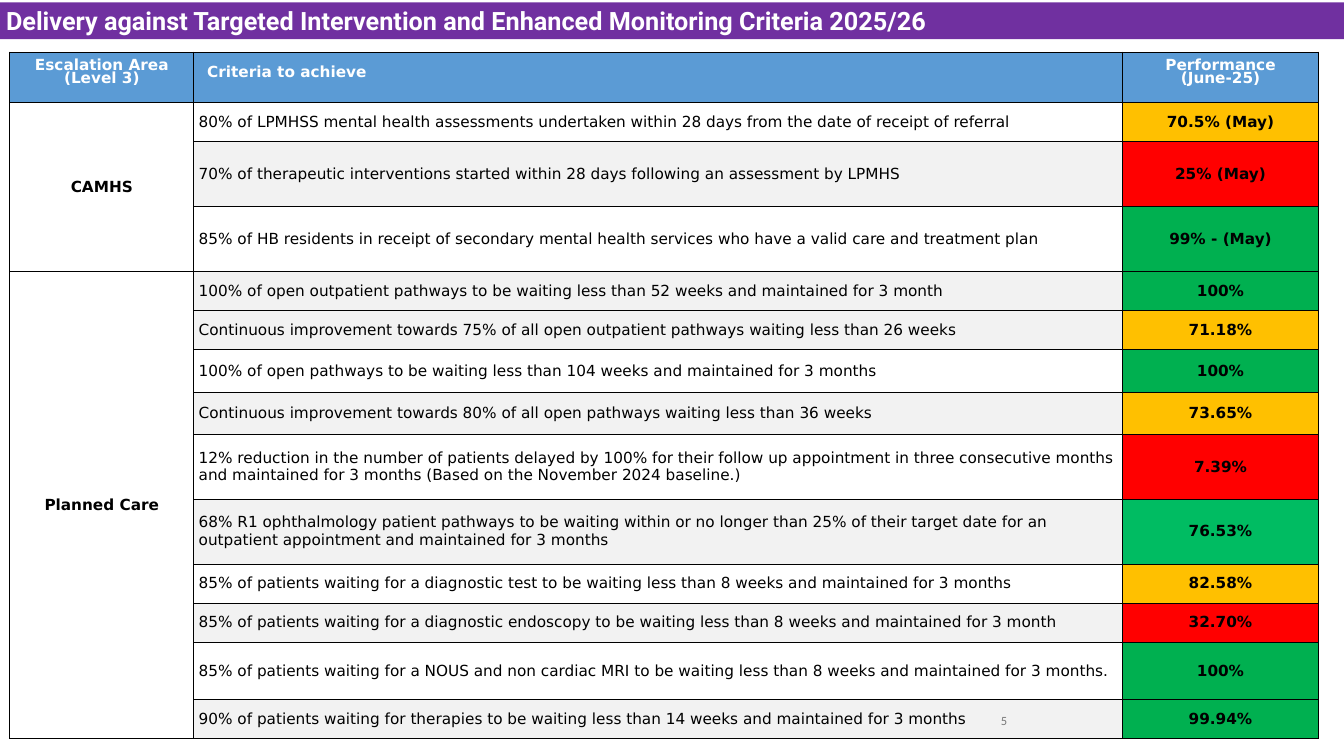
from dataclasses import dataclass
from typing import Any

from lxml import etree
from pptx import Presentation
from pptx.dml.color import RGBColor
from pptx.enum.shapes import MSO_SHAPE
from pptx.enum.text import MSO_ANCHOR, PP_ALIGN
from pptx.oxml.ns import qn
from pptx.util import Inches, Pt

LEFT, CENTER, RIGHT, JUSTIFY = PP_ALIGN.LEFT, PP_ALIGN.CENTER, PP_ALIGN.RIGHT, PP_ALIGN.JUSTIFY
TOP, MIDDLE = MSO_ANCHOR.TOP, MSO_ANCHOR.MIDDLE
RECTANGLE = MSO_SHAPE.RECTANGLE

SLIDE_WIDTH, SLIDE_HEIGHT = Inches(21.99), Inches(12.37)
TABLE_FONT = "DejaVu Sans"
COLOURS = {
    "banner": "7030A0", "header": "5B9BD5", "white": "FFFFFF", "black": "000000",
    "band": "F2F2F2", "number": "797979", "amber": "FFC000", "red": "FF0000",
    "green": "00B050", "light green": "00BC62",
}
COLUMN_SHARES = (13.69, 69.12, 14.55)
HEADER_SHARE = 6.71
SHORT, TALL = 5.17, 8.57


@dataclass(frozen=True)
class Criterion:
    wording: str
    performance: str
    rating: str
    band: str
    height: float = SHORT


@dataclass(frozen=True)
class Area:
    name: str
    criteria: tuple[Criterion, ...]


@dataclass(frozen=True)
class TextStyle:
    font: dict[str, Any]
    colour: str
    paragraph: dict[str, Any]


HEADERS = (
    (("Escalation Area", "(Level 3)"), CENTER),
    (("Criteria to achieve",), LEFT),
    (("Performance", "(June-25)"), CENTER),
)
AREAS = (
    Area("CAMHS", (
        Criterion("80% of LPMHSS mental health assessments undertaken within 28 days from the date of receipt of referral",
                  "70.5% (May)", "amber", "white"),
        Criterion("70% of therapeutic interventions started within 28 days following an assessment by LPMHS",
                  "25% (May)", "red", "band", TALL),
        Criterion("85% of HB residents in receipt of secondary mental health services who have a valid care and treatment plan",
                  "99% - (May)", "green", "white", TALL),
    )),
    Area("Planned Care", (
        Criterion("100% of open outpatient pathways to be waiting less than 52 weeks and maintained for 3 month",
                  "100%", "green", "band"),
        Criterion("Continuous improvement towards 75% of all open outpatient pathways waiting less than 26 weeks",
                  "71.18%", "amber", "band"),
        Criterion("100% of open pathways to be waiting less than 104 weeks and maintained for 3 months",
                  "100%", "green", "white", 5.74),
        Criterion("Continuous improvement towards 80% of all open pathways waiting less than 36 weeks",
                  "73.65%", "amber", "band", 5.5),
        Criterion("12% reduction in the number of patients delayed by 100% for their follow up appointment in three "
                  "consecutive months and maintained for 3 months (Based on the November 2024 baseline.)",
                  "7.39%", "red", "white", TALL),
        Criterion("68% R1 ophthalmology patient pathways to be waiting within or no longer than 25% of their target date "
                  "for an outpatient appointment and maintained for 3 months",
                  "76.53%", "light green", "band", TALL),
        Criterion("85% of patients waiting for a diagnostic test to be waiting less than 8 weeks and maintained for 3 months",
                  "82.58%", "amber", "white"),
        Criterion("85% of patients waiting for a diagnostic endoscopy to be waiting less than 8 weeks and maintained for 3 month",
                  "32.70%", "red", "band"),
        Criterion("85% of patients waiting for a NOUS and non cardiac MRI to be waiting less than 8 weeks and maintained for 3 months.",
                  "100%", "green", "white", 7.6),
        Criterion("90% of patients waiting for therapies to be waiting less than 14 weeks and maintained for 3 months",
                  "99.94%", "green", "band"),
    )),
)


def across(share: float) -> int:
    return round(SLIDE_WIDTH * share / 100)


def down(share: float) -> int:
    return round(SLIDE_HEIGHT * share / 100)


def apply(target: Any, values: dict[str, Any]) -> None:
    for name, value in values.items():
        setattr(target, name, value)


def paint(fill: Any, colour: str) -> None:
    fill.solid()
    fill.fore_color.rgb = RGBColor.from_string(COLOURS[colour])


def write(frame: Any, lines: tuple[str, ...], style: TextStyle) -> None:
    for index, line in enumerate(lines):
        para = frame.add_paragraph() if index else frame.paragraphs[0]
        apply(para, style.paragraph)
        span = para.add_run()
        span.text = line
        apply(span.font, style.font)
        span.font.color.rgb = RGBColor.from_string(COLOURS[style.colour])


def margins(horizontal: float, vertical: float) -> dict[str, int]:
    sides = {side: Inches(horizontal) for side in ("margin_left", "margin_right")}
    return sides | {side: Inches(vertical) for side in ("margin_top", "margin_bottom")}


def add_borders(cell: Any) -> None:
    properties = cell._tc.get_or_add_tcPr()
    for index, side in enumerate(("lnL", "lnR", "lnT", "lnB")):
        line = etree.Element(qn(f"a:{side}"), w=str(Pt(1)))
        solid = etree.SubElement(line, qn("a:solidFill"))
        etree.SubElement(solid, qn("a:srgbClr"), val=COLOURS["black"])
        properties.insert(index, line)


def fill_cell(cell: Any, lines: tuple[str, ...], fill: str, style: TextStyle, insets: dict[str, int]) -> None:
    apply(cell, insets | {"vertical_anchor": MIDDLE})
    paint(cell.fill, fill)
    write(cell.text_frame, lines, style)


def table_style(bold: bool, alignment: Any) -> TextStyle:
    return TextStyle({"name": TABLE_FONT, "size": Pt(18), "bold": bold}, "black", {"alignment": alignment})


def add_criteria_table(page: Any) -> None:
    criteria = [criterion for area in AREAS for criterion in area.criteria]
    heights = [HEADER_SHARE] + [criterion.height for criterion in criteria]
    table = page.shapes.add_table(
        len(heights), len(COLUMN_SHARES), across(0.73), down(6.87),
        across(sum(COLUMN_SHARES)), down(sum(heights))).table
    apply(table, {"first_row": False, "horz_banding": False})
    for column, share in zip(table.columns, COLUMN_SHARES):
        column.width = across(share)
    for row, share in zip(table.rows, heights):
        row.height = down(share)
    for cell in table.iter_cells():
        add_borders(cell)

    for column, (lines, alignment) in enumerate(HEADERS):
        spacing = {"alignment": alignment, "line_spacing": Pt(8), "space_after": Pt(8 * (len(lines) - 1))}
        style = TextStyle({"name": TABLE_FONT, "size": Pt(18), "bold": True}, "white", spacing)
        fill_cell(table.cell(0, column), lines, "header", style, margins(0.22, 0.11))

    insets = margins(0.08, 0.08)
    strong, plain = table_style(True, CENTER), table_style(False, LEFT)
    first = 1
    for area in AREAS:
        last = first + len(area.criteria) - 1
        table.cell(first, 0).merge(table.cell(last, 0))
        fill_cell(table.cell(first, 0), (area.name,), "white", strong, insets)
        for row, criterion in enumerate(area.criteria, first):
            fill_cell(table.cell(row, 1), (criterion.wording,), criterion.band, plain, insets)
            fill_cell(table.cell(row, 2), (criterion.performance,), criterion.rating, strong, insets)
        first = last + 1


def add_page_number(page: Any) -> None:
    box = page.shapes.add_textbox(across(57.39), down(92.64), across(18.28), down(5.34))
    apply(box.text_frame, margins(0.16, 0.08) | {"word_wrap": True, "vertical_anchor": MIDDLE})
    write(box.text_frame, ("5",),
          TextStyle({"name": "Calibri", "size": Pt(14.8)}, "number", {"alignment": RIGHT}))


def add_banner(page: Any) -> None:
    box = page.shapes.add_shape(RECTANGLE, 0, down(0.32), SLIDE_WIDTH, down(4.85))
    box.shadow.inherit = False
    paint(box.fill, "banner")
    box.line.fill.background()
    apply(box.text_frame, {"word_wrap": True, "vertical_anchor": TOP})
    write(box.text_frame, ("Delivery against Targeted Intervention and Enhanced Monitoring Criteria 2025/26",),
          TextStyle({"name": "Roboto", "size": Pt(29.7), "bold": True}, "white",
                    {"alignment": JUSTIFY, "space_after": Pt(9.9)}))


def main() -> None:
    deck = Presentation()
    apply(deck, {"slide_width": SLIDE_WIDTH, "slide_height": SLIDE_HEIGHT})
    page = deck.slides.add_slide(deck.slide_layouts[6])
    add_criteria_table(page)
    add_page_number(page)
    add_banner(page)
    deck.save("out.pptx")


if __name__ == "__main__":
    main()
